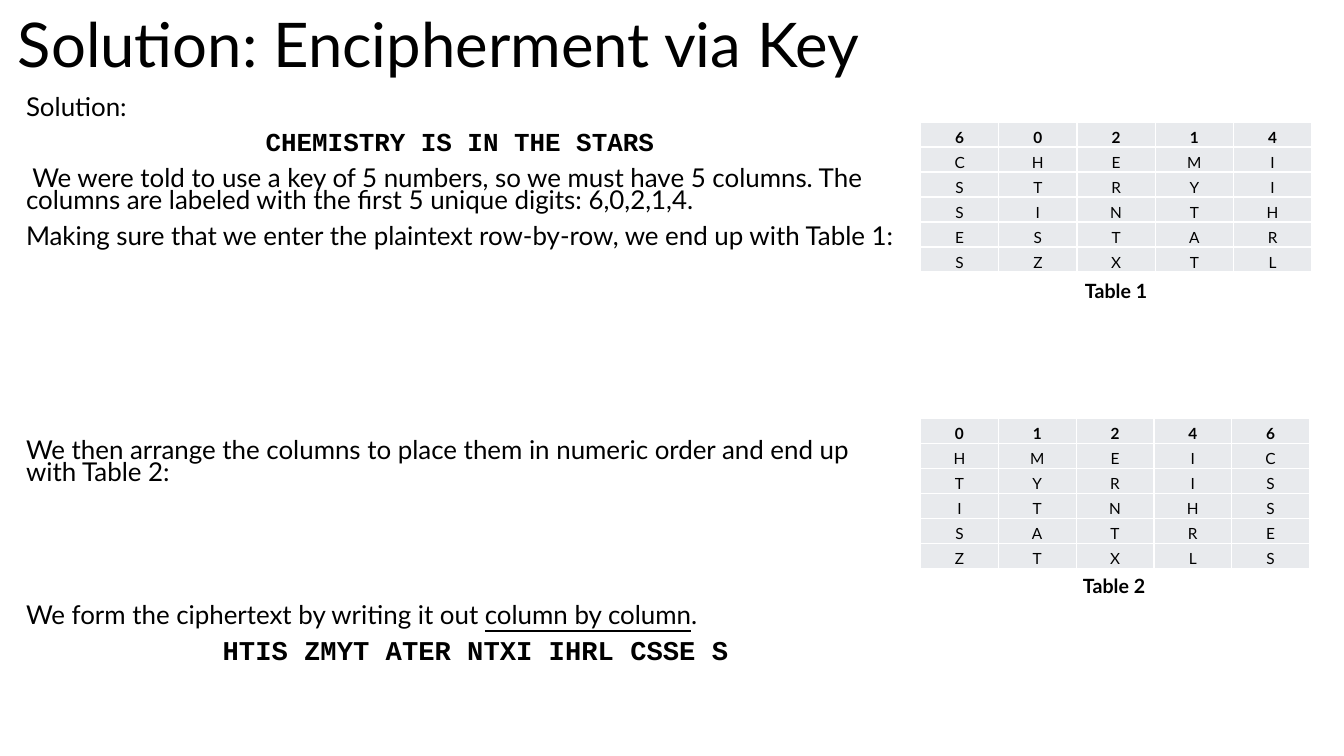
from lxml.etree import SubElement
from pptx import Presentation
from pptx.dml.color import RGBColor
from pptx.enum.text import MSO_ANCHOR as ANCHOR, PP_ALIGN as ALIGN
from pptx.oxml.ns import qn
from pptx.util import Inches, Pt

SANS, MONO = "Lato", "Courier New"
BLACK, WHITE, CELL = "000000", "FFFFFF", "E8EAED"
GAP, LINE_STEP = 10, 25.5
GRID = ["60214", "CHEMI", "STRYI", "SINTH", "ESTAR", "SZXTL"]


def rgb(value):
    """Return the colour for a hex string."""
    return RGBColor.from_string(value)


def style(r, size, font=SANS, bold=False, underline=False):
    """Format one run."""
    f = r.font
    f.size, f.name, f.bold, f.underline = Pt(size), font, bold, underline
    f.color.rgb = rgb(BLACK)


def add_box(s, left, top, width, height, anchor=ANCHOR.TOP):
    """Add a wrapping text box and return its text frame."""
    sp = s.shapes.add_textbox(Inches(left), Inches(top), Inches(width), Inches(height))
    tf = sp.text_frame
    tf.word_wrap, tf.vertical_anchor = True, anchor
    return tf


def add_title(s, left, top, width, height):
    """Place the slide title."""
    p = add_box(s, left, top, width, height, ANCHOR.MIDDLE).paragraphs[0]
    p.text, p.line_spacing = "Solution: Encipherment via Key", 0.9
    style(p.runs[0], 44)


def add_body(s, left, top, width, height):
    """Place the explanation, leaving whole lines free before some steps."""
    plain, code, cipher = (18.5, SANS), (18.5, MONO, True), (19.4, MONO, True)
    steps = [
        (0, [("Solution:", plain)]),
        (0, [("CHEMISTRY IS IN THE STARS", code)]),
        (0, [(" We were told to use a key of 5 numbers, so we must have 5 columns. "
              "The columns are labeled with the first 5 unique digits: 6,0,2,1,4.", plain)]),
        (0, [("Making sure that we enter the plaintext row-by-row, "
              "we end up with Table 1:", plain)]),
        (5, [("We then arrange the columns to place them in numeric order "
              "and end up with Table 2:", plain)]),
        (3, [("We form the ciphertext by writing it out ", plain),
             ("column by column", (*plain, False, True)), (".", plain)]),
        (0, [("HTIS ZMYT ATER NTXI IHRL CSSE S", cipher)]),
    ]
    tf = add_box(s, left, top, width, height)
    for i, (free_lines, runs) in enumerate(steps):
        p = tf.add_paragraph() if i else tf.paragraphs[0]
        p.line_spacing, p.space_before = 0.7, Pt(GAP + free_lines * LINE_STEP)
        p.alignment = ALIGN.CENTER if runs[0][1][1] == MONO else ALIGN.LEFT
        for text, look in runs:
            r = p.add_run()
            r.text = text
            style(r, *look)
    p._p.get_or_add_pPr().set("marL", str(Inches(0.32)))


def add_borders(cell):
    """Draw thin white borders on all sides of a cell."""
    tc_pr = cell._tc.get_or_add_tcPr()
    for side in ("a:lnL", "a:lnR", "a:lnT", "a:lnB"):
        ln = SubElement(tc_pr, qn(side), w=str(Pt(1)))
        SubElement(SubElement(ln, qn("a:solidFill")), qn("a:srgbClr"), val=WHITE)


def add_grid(s, rows, left, top, width, height):
    """Place a letter table whose first row holds the key digits."""
    n_rows, n_cols = len(rows), len(rows[0])
    table = s.shapes.add_table(n_rows, n_cols, Inches(left), Inches(top),
                               Inches(width), Inches(height)).table
    table.first_row = table.horz_banding = False
    for i, row in enumerate(rows):
        for j, letter in enumerate(row):
            cell = table.cell(i, j)
            cell.margin_left = cell.margin_right = cell.margin_top = Inches(0.01)
            cell.margin_bottom = 0
            cell.vertical_anchor = ANCHOR.BOTTOM
            add_borders(cell)
            cell.fill.solid()
            cell.fill.fore_color.rgb = rgb(CELL)
            p = cell.text_frame.paragraphs[0]
            p.text, p.alignment = letter, ALIGN.CENTER
            style(p.runs[0], 11, bold=i == 0)


def add_caption(s, text, left, top, width, height):
    """Place a centred table caption."""
    p = add_box(s, left, top, width, height).paragraphs[0]
    p.text, p.alignment = text, ALIGN.CENTER
    style(p.runs[0], 14, bold=True)


def main():
    """Build the slide and save it."""
    prs = Presentation()
    prs.slide_width, prs.slide_height = Inches(13.33), Inches(7.5)
    s = prs.slides.add_slide(prs.slide_layouts[6])
    add_title(s, 0.08, 0, 11.5, 0.95)
    add_body(s, 0.16, 0.93, 8.8, 5.95)
    sorted_grid = list(zip(*sorted(zip(*GRID))))
    add_grid(s, GRID, 9.13, 1.21, 3.88, 1.49)
    add_grid(s, sorted_grid, 9.13, 4.15, 3.86, 1.49)
    add_caption(s, "Table 1", 9.13, 2.72, 3.88, 0.34)
    add_caption(s, "Table 2", 9.11, 5.64, 3.88, 0.34)
    prs.save("out.pptx")


if __name__ == "__main__":
    main()
